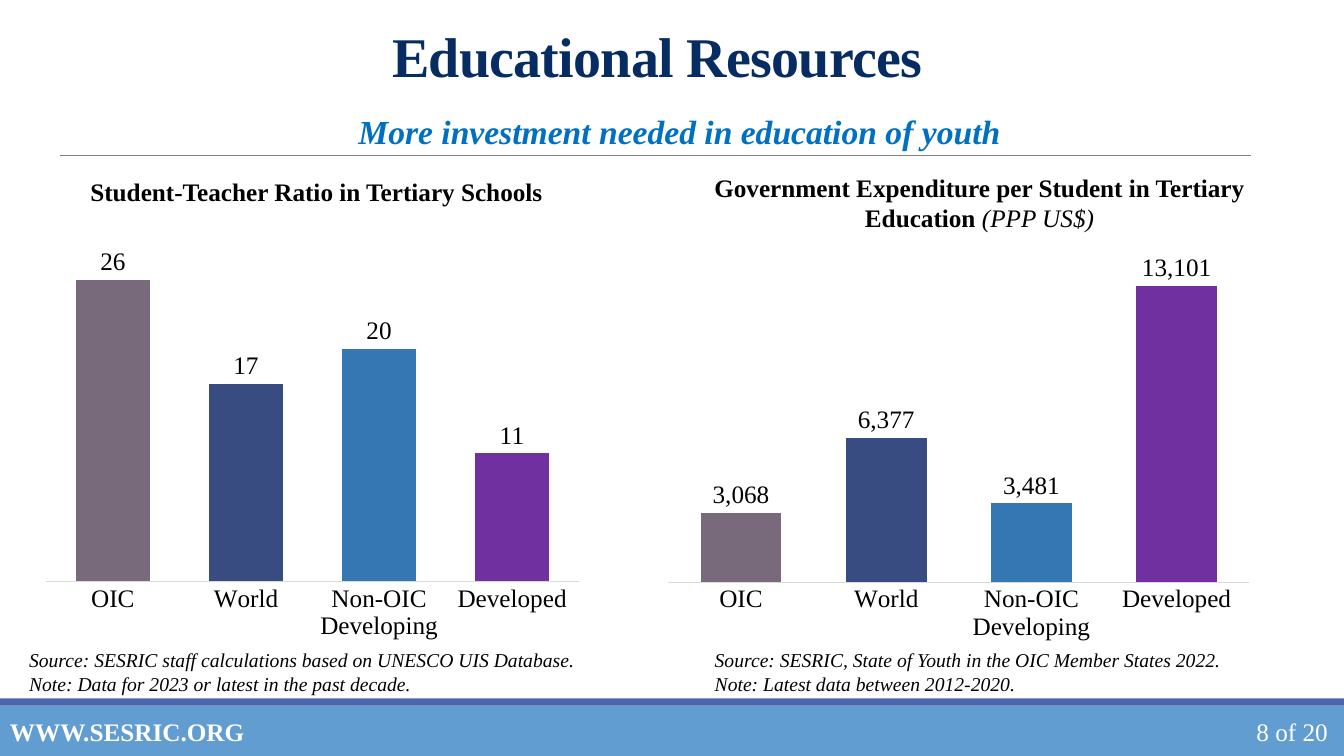
"""Build the Educational Resources slide with two column charts."""
import pptx
import pptx.chart.data
import pptx.dml.color
import pptx.enum.chart
import pptx.enum.shapes
import pptx.enum.text
import pptx.oxml
import pptx.util

Inches = pptx.util.Inches
Pt = pptx.util.Pt
ALIGN = pptx.enum.text.PP_ALIGN
ANCHOR = pptx.enum.text.MSO_ANCHOR
FONT = "Times New Roman"


def color(hex_value):
    return pptx.dml.color.RGBColor.from_string(hex_value)


def add_text(box, paragraphs, size=18, ink="000000", bold=False, italic=False,
             align=ALIGN.LEFT, anchor=ANCHOR.TOP, spacing=None, tracking=None, right=0.1):
    text_box = slide.shapes.add_textbox(*map(Inches, box))
    frame = text_box.text_frame
    frame.word_wrap = True
    frame.vertical_anchor = anchor
    frame.margin_right = Inches(right)
    for index, runs in enumerate(paragraphs):
        paragraph = frame.add_paragraph() if index else frame.paragraphs[0]
        paragraph.alignment = align
        paragraph.line_spacing = spacing
        for text, *style in runs:
            run = paragraph.add_run()
            run.text = text
            run.font.name = FONT
            run.font.size = Pt(size)
            run.font.color.rgb = color(ink)
            run.font.bold, run.font.italic = style or (bold, italic)
            if tracking is not None:
                run.font._element.set("spc", str(tracking))


presentation = pptx.Presentation()
presentation.slide_width = Inches(13.33)
presentation.slide_height = Inches(7.5)
slide = presentation.slides.add_slide(presentation.slide_layouts[6])

for top, height, fill in [(7, 0.5, "629DD1"), (6.93, 0.07, "4A66AC")]:
    band = slide.shapes.add_shape(pptx.enum.shapes.MSO_SHAPE.RECTANGLE,
                                  0, Inches(top), Inches(13.33), Inches(height))
    band.shadow.inherit = False
    band.fill.solid()
    band.fill.fore_color.rgb = color(fill)
    band.line.fill.background()

rule = slide.shapes.add_connector(pptx.enum.shapes.MSO_CONNECTOR.STRAIGHT,
                                  Inches(0.6), Inches(1.54), Inches(12.41), Inches(1.54))
rule.line.color.rgb = color("808080")
rule.line.width = Pt(0.5)
rule._element.spPr.append(pptx.oxml.parse_xml(
    '<a:effectLst xmlns:a="http://schemas.openxmlformats.org/drawingml/2006/main"/>'))

add_text((0.62, 0.25, 11.8, 0.7), [[("Educational Resources",)]], size=40, ink="072C62",
         bold=True, align=ALIGN.CENTER, anchor=ANCHOR.MIDDLE, spacing=0.85, tracking=-50)
add_text((0.35, 1.05, 12.78, 0.5), [[("More investment needed in education of youth",)]],
         size=24, ink="0070C0", bold=True, italic=True, align=ALIGN.CENTER)

categories = ["OIC", "World", "Non-OIC Developing", "Developed"]
column_colors = ["78697B", "384C81", "3477B2", "7030A0"]
panels = [
    {"heading": [("Student-Teacher Ratio in Tertiary Schools", True, False)],
     "heading_box": (0.36, 1.7, 5.56, 0.56),
     "chart_box": (0.35, 2.23, 5.5, 4.2),
     "values": [26, 17, 20, 11], "maximum": 30, "axis_format": "0.0",
     "source_left": 0.19,
     "source": ["Source: SESRIC staff calculations based on UNESCO UIS Database.",
                "Note: Data for 2023 or latest in the past decade."]},
    {"heading": [("Government Expenditure per Student in Tertiary Education ", True, False),
                 ("(PPP US$)", False, True)],
     "heading_box": (6.62, 1.66, 6.19, 0.57),
     "chart_box": (6.51, 2.53, 6, 3.9),
     "values": [3068, 6377, 3481, 13101], "maximum": 14000, "axis_format": "#,##0",
     "source_left": 6.99,
     "source": ["Source: SESRIC, State of Youth in the OIC Member States 2022.",
                "Note: Latest data between 2012-2020."]},
]

for panel in panels:
    add_text(panel["heading_box"], [panel["heading"]], align=ALIGN.CENTER)
    add_text((panel["source_left"], 6.38, 5.73, 0.57), [[(line,)] for line in panel["source"]],
             size=14, italic=True, align=ALIGN.JUSTIFY)

    chart_data = pptx.chart.data.CategoryChartData()
    chart_data.categories = categories
    chart_data.add_series("Series 1", panel["values"])
    chart = slide.shapes.add_chart(pptx.enum.chart.XL_CHART_TYPE.COLUMN_CLUSTERED,
                                   *map(Inches, panel["chart_box"]), chart_data).chart
    chart.has_title = False
    chart.has_legend = False
    chart.font.name = FONT
    chart.font.size = Pt(18)
    chart.font.color.rgb = color("000000")

    for axis in (chart.category_axis, chart.value_axis):
        axis.has_major_gridlines = False
        axis.major_tick_mark = pptx.enum.chart.XL_TICK_MARK.NONE
        axis.minor_tick_mark = pptx.enum.chart.XL_TICK_MARK.NONE
    chart.category_axis.format.line.color.rgb = color("D9D9D9")
    chart.category_axis.format.line.width = Pt(0.75)
    value_axis = chart.value_axis
    value_axis.minimum_scale = 0
    value_axis.maximum_scale = panel["maximum"]
    value_axis.tick_label_position = pptx.enum.chart.XL_TICK_LABEL_POSITION.NONE
    value_axis.tick_labels.number_format = panel["axis_format"]
    value_axis.tick_labels.number_format_is_linked = False
    value_axis.format.line.fill.background()

    plot = chart.plots[0]
    plot.gap_width = 80
    plot.overlap = -27
    plot.vary_by_categories = False
    plot.has_data_labels = True
    labels = plot.data_labels
    labels.show_value = True
    labels.position = pptx.enum.chart.XL_LABEL_POSITION.OUTSIDE_END
    labels.number_format = "#,##0"
    labels.number_format_is_linked = False
    labels.font.name = FONT
    labels.font.size = Pt(18)
    labels.font.color.rgb = color("000000")
    series = plot.series[0]
    series.format.fill.solid()
    series.format.fill.fore_color.rgb = color("4A66AC")
    for index, column_color in enumerate(column_colors):
        fill = series.points[index].format.fill
        fill.solid()
        fill.fore_color.rgb = color(column_color)

add_text((0, 7.06, 2.58, 0.4), [[("WWW.SESRIC.ORG",)]], ink="FFFFFF", bold=True,
         anchor=ANCHOR.MIDDLE)
add_text((11.9, 7.06, 1.43, 0.4), [[("8 of 20",)]], ink="FFFFFF", align=ALIGN.RIGHT,
         anchor=ANCHOR.MIDDLE, right=0.16)

presentation.save("out.pptx")
